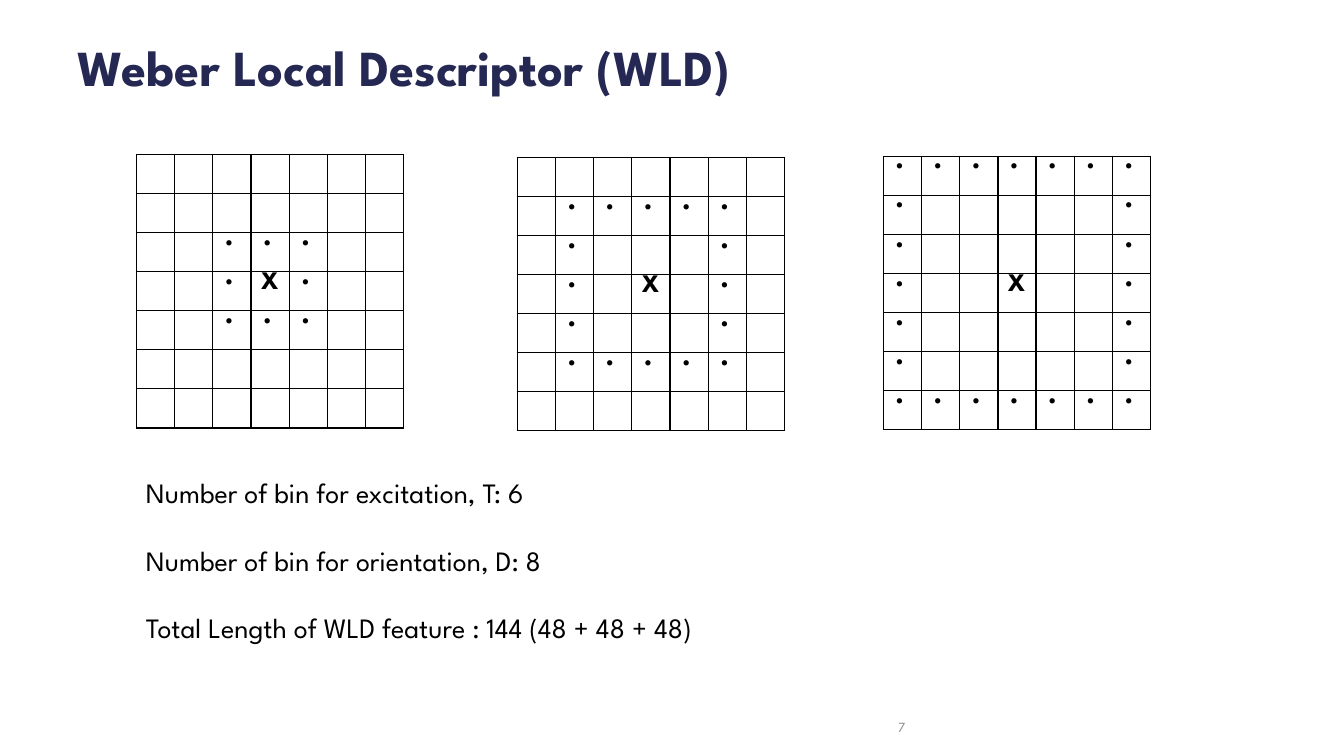
from dataclasses import dataclass

from lxml import etree
from pptx import Presentation
from pptx.enum import text
from pptx.oxml import ns
from pptx.util import Pt

COLORS = {"title": "242852", "ink": "000000", "page": "8C8C8C"}
FONT = "League Spartan"
GRID_SIZE = 7
CENTER = GRID_SIZE // 2
COLUMN_WIDTH, ROW_HEIGHT = 27.29, 27.9
CELL_FORMAT = {"margin_left": Pt(7.2), "margin_right": 0,
               "margin_top": 0, "margin_bottom": 0}


@dataclass
class Neighborhood:
    left: float
    top: float
    radius: int


@dataclass
class Label:
    lines: list[str]
    left: float
    top: float
    width: float
    height: float
    size: float
    color: str
    bold: bool = False
    align: text.PP_ALIGN = text.PP_ALIGN.LEFT
    anchor: text.MSO_ANCHOR = text.MSO_ANCHOR.TOP
    gap: float = 0


NEIGHBORHOODS = [
    Neighborhood(97.5, 110.4, 1),
    Neighborhood(369.5, 112.4, 2),
    Neighborhood(631, 111.6, 3),
]

LABELS = [
    Label(["Weber Local Descriptor (WLD)"], 48.24, 22, 864, 90, 36, "title", bold=True),
    Label(["Number of bin for excitation, T: 6",
           "Number of bin for orientation, D: 8",
           "Total Length of WLD feature : 144 (48 + 48 + 48)"],
          97.2, 336.24, 578.88, 128.16, 20, "ink", gap=24.1),
    Label(["7"], 552.24, 509.76, 101.52, 19.44, 10, "page",
          align=text.PP_ALIGN.RIGHT, anchor=text.MSO_ANCHOR.MIDDLE),
]


def add_run(paragraph, words: str, size: float, color: str, bold: bool) -> None:
    run = paragraph.add_run()
    run.text = words
    font_format = {"name": FONT, "size": Pt(size), "bold": bold}
    for name, value in font_format.items():
        setattr(run.font, name, value)
    run.font.color.rgb = RGBColor.from_string(COLORS[color])


def add_label(slide, label: Label) -> None:
    box = slide.shapes.add_textbox(
        Pt(label.left), Pt(label.top), Pt(label.width), Pt(label.height))
    frame = box.text_frame
    frame.word_wrap = True
    frame.vertical_anchor = label.anchor
    for index, line in enumerate(label.lines):
        paragraph = frame.add_paragraph() if index else frame.paragraphs[0]
        paragraph.alignment = label.align
        if index:
            paragraph.space_before = Pt(label.gap)
        add_run(paragraph, line, label.size, label.color, label.bold)


def outline_cell(cell) -> None:
    properties = cell._tc.get_or_add_tcPr()
    for side in ("lnL", "lnR", "lnT", "lnB"):
        border = etree.SubElement(properties, ns.qn(f"a:{side}"), w=str(Pt(1)))
        fill = etree.SubElement(border, ns.qn("a:solidFill"))
        etree.SubElement(fill, ns.qn("a:srgbClr"), val=COLORS["ink"])
    cell.fill.background()


def mark_at(row: int, column: int, radius: int) -> str:
    """Return X at the center and a dot on the ring of the given radius."""
    distance = max(abs(row - CENTER), abs(column - CENTER))
    return {0: "X", radius: "•"}.get(distance, "")


def add_neighborhood(slide, area: Neighborhood) -> None:
    table = slide.shapes.add_table(
        GRID_SIZE, GRID_SIZE, Pt(area.left), Pt(area.top),
        Pt(GRID_SIZE * COLUMN_WIDTH), Pt(GRID_SIZE * ROW_HEIGHT)).table
    table.first_row = table.horz_banding = False
    for column in table.columns:
        column.width = Pt(COLUMN_WIDTH)
    for row in table.rows:
        row.height = Pt(ROW_HEIGHT)
    for index, cell in enumerate(table.iter_cells()):
        for name, value in CELL_FORMAT.items():
            setattr(cell, name, value)
        outline_cell(cell)
        mark = mark_at(*divmod(index, GRID_SIZE), area.radius)
        if mark:
            add_run(cell.text_frame.paragraphs[0], mark, 18, "ink", mark == "X")


def main() -> None:
    deck = Presentation()
    deck.slide_width, deck.slide_height = Pt(960), Pt(540)
    slide = deck.slides.add_slide(deck.slide_layouts[6])
    for area in NEIGHBORHOODS:
        add_neighborhood(slide, area)
    for label in LABELS:
        add_label(slide, label)
    deck.save("out.pptx")


from pptx.dml.color import RGBColor

if __name__ == "__main__":
    main()
